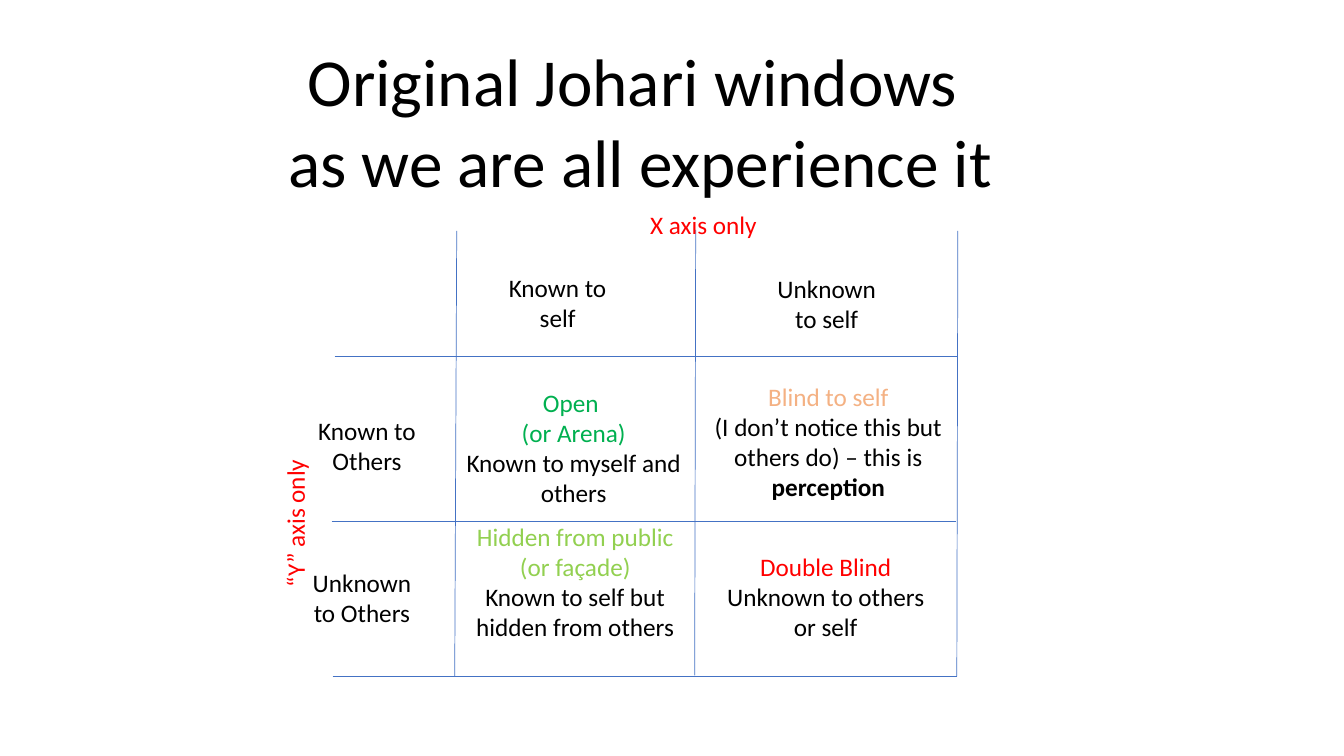
import pptx
import pptx.util
import pptx.dml.color
import pptx.enum.shapes
import pptx.enum.text
import pptx.oxml
import pptx.oxml.ns
from dataclasses import dataclass

# Content: each paragraph is a list of (text, colour name, bold)
TITLE = ["Original Johari windows ", "as we are all experience it"]
TITLE_BOX = (272, 34, 726, 172)

# Headings and axis names: text, box
HEADS = [
    ("Known to self", (489, 265, 128, 71)),
    ("Unknown to self", (756, 266, 128, 71)),
    ("Unknown to Others", (295, 558, 128, 71)),
    ("Known to Others", (300, 407, 128, 71)),
]
AXES = [
    ("X axis only", (635, 203, 144, 40), 0),
    ("“Y” axis only", (209, 489, 167, 40), 270),
]
PANES = [
    ((451, 379, 236, 131), [
        [("Open ", "open", False)],
        [("(or Arena)", "open", False)],
        [("Known to myself and others", "text", False)]]),
    ((697, 373, 249, 131), [
        [("Blind to self", "blind", False)],
        [("(I don’t notice this but others do) – this is ", "text", False),
         ("perception", "text", True)]]),
    ((711, 542, 216, 101), [
        [("Double Blind", "alert", False)],
        [("Unknown to others or self", "text", False)]]),
    ((462, 512, 217, 162), [
        [("Hidden from public ", "hidden", False)],
        [("(or façade)", "hidden", False)],
        [("Known to self but hidden from others ", "text", False)]]),
]

# Grid: rows as (left, y, right), columns as (foot x, foot y, top x, top y)
ROWS = [(332, 354, 950), (329, 517, 948), (330, 671, 949)]
COLS = [(949, 671, 950, 229), (689, 670, 690, 228), (451, 671, 453, 229)]


@dataclass(frozen=True)
class Theme:
    font: str = "Calibri"
    head: int = 48
    body: int = 18
    rule: float = 0.5
    text: str = "000000"
    line: str = "4472C4"
    open: str = "00B050"
    blind: str = "F4B183"
    hidden: str = "92D050"
    alert: str = "FF0000"


THEME = Theme()
SCALE = 9144  # EMU in one px, 100 px to the inch
ALIGN = pptx.enum.text.PP_ALIGN


def px(*nums):
    return [pptx.util.Emu(n * SCALE) for n in nums]


def tint(name):
    return pptx.dml.color.RGBColor.from_string(getattr(THEME, name))


def write(frame, paras, size, align):
    """Fill a text frame with paragraphs of coloured runs."""
    for i, parts in enumerate(paras):
        para = frame.paragraphs[0] if i == 0 else frame.add_paragraph()
        para.alignment = align
        for text, name, bold in parts:
            run = para.add_run()
            run.text = text
            run.font.name = THEME.font
            run.font.size = pptx.util.Pt(size)
            run.font.bold = bold
            run.font.color.rgb = tint(name)


def add_text(slide, box, paras, align=ALIGN.CENTER, turn=0):
    shape = slide.shapes.add_textbox(*px(*box))
    shape.rotation = turn
    shape.text_frame.word_wrap = True
    write(shape.text_frame, paras, THEME.body, align)


def add_rule(slide, ends):
    kind = pptx.enum.shapes.MSO_CONNECTOR.STRAIGHT
    rule = slide.shapes.add_connector(kind, *px(*ends))
    rule.line.color.rgb = tint("line")
    rule.line.width = pptx.util.Pt(THEME.rule)
    none = pptx.oxml.parse_xml(
        "<a:effectLst %s/>" % pptx.oxml.ns.nsdecls("a"))
    rule._element.spPr.append(none)


def add_title(slide):
    title = slide.shapes.title
    title.left, title.top, title.width, title.height = px(*TITLE_BOX)
    frame = title.text_frame
    frame.word_wrap = False
    frame.auto_size = pptx.enum.text.MSO_AUTO_SIZE.NONE
    frame.vertical_anchor = pptx.enum.text.MSO_ANCHOR.TOP
    paras = [[(line, "text", False)] for line in TITLE]
    write(frame, paras, THEME.head, ALIGN.CENTER)


def main():
    deck = pptx.Presentation()
    deck.slide_width, deck.slide_height = px(1333, 750)
    slide = deck.slides.add_slide(deck.slide_layouts.get_by_name("Title Only"))

    # Grid lines
    for left, y, right in ROWS:
        add_rule(slide, (left, y, right, y))
    for ends in COLS:
        add_rule(slide, ends)

    # Headings and window panes
    for text, box in HEADS:
        add_text(slide, box, [[(text, "text", False)]])
    for box, paras in PANES:
        add_text(slide, box, paras)

    # Title and axis names
    add_title(slide)
    for text, box, turn in AXES:
        add_text(slide, box, [[(text, "alert", False)]], ALIGN.LEFT, turn)

    deck.save("out.pptx")


if __name__ == "__main__":
    main()
